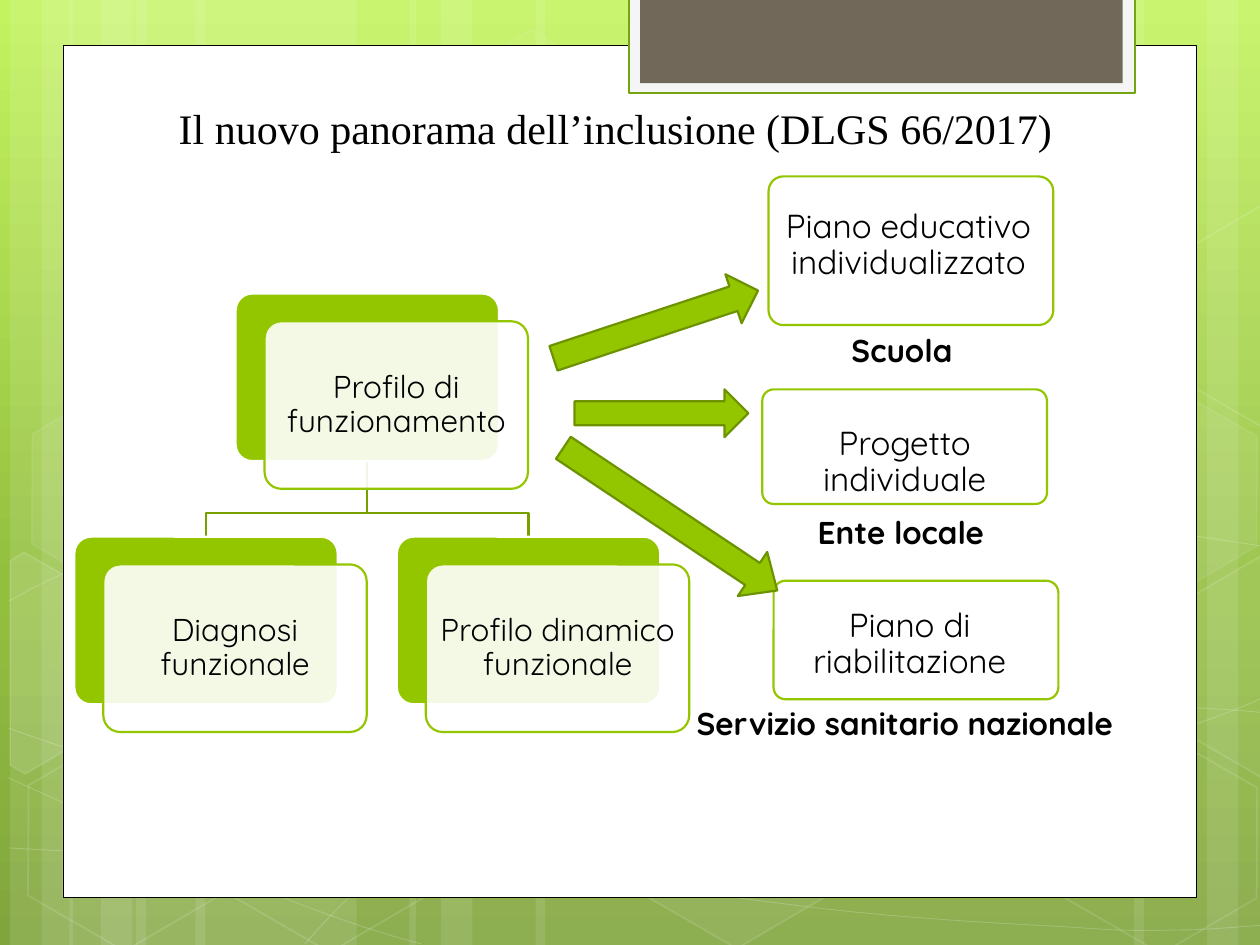
from copy import deepcopy
from math import cos, radians, sin

from lxml import etree
from pptx import Presentation
from pptx.dml.color import RGBColor
from pptx.enum.shapes import MSO_SHAPE
from pptx.enum.text import MSO_ANCHOR, PP_ALIGN
from pptx.oxml.ns import qn
from pptx.util import Inches, Pt

RECT = MSO_SHAPE.RECTANGLE
ROUNDED = MSO_SHAPE.ROUNDED_RECTANGLE
HEXAGON = MSO_SHAPE.HEXAGON
ARROW = MSO_SHAPE.RIGHT_ARROW
CENTER, LEFT = PP_ALIGN.CENTER, PP_ALIGN.LEFT
MIDDLE, TOP = MSO_ANCHOR.MIDDLE, MSO_ANCHOR.TOP

SLIDE_W, SLIDE_H = Inches(10), Inches(7.5)
COLS, ROWS = 10, 7.5
COL, ROW = SLIDE_W / COLS, SLIDE_H / ROWS
BODY_FONT, TITLE_FONT = "Quicksand", "Times New Roman"
GREEN, DARK_GREEN, WHITE, BLACK = "94C600", "6D9200", "FFFFFF", "000000"
TILT = 30

BANDS = [(1.08, 1.75), (0.08, 0.5), (0.33, 0.83), (1.55, 1.75), (0.55, 0.5),
         (0.8, 0.83), (7.33, 1.75), (9.58, 0.5), (9, 0.83), (4.25, 3.08),
         (3.25, 0.5), (3.5, 0.83)]
WAVES = [
    [(0.07, 6.73), (0.61, 6.76), (1.15, 6.79), (1.9, 6.78), (2.65, 6.77),
     (3.58, 6.75), (4.58, 6.65), (5.58, 6.55), (7, 6.36), (7.92, 6.17),
     (8.83, 5.98), (9.77, 5.68), (10.07, 5.51)],
    [(0.07, 4.77), (0.36, 4.61), (0.65, 4.46), (1.21, 4.31), (1.78, 4.16),
     (2.59, 3.94), (3.47, 3.87), (4.36, 3.8), (5.44, 3.79), (6.54, 3.87),
     (7.64, 3.95), (9.47, 4.26), (10.07, 4.34)],
    [(0.06, 6.17), (1.27, 6.72), (2.47, 7.27), (3.34, 7.49)],
    [(0.07, 5.78), (0.38, 5.89), (0.7, 6), (1.28, 6.16), (1.86, 6.31),
     (2.73, 6.56), (3.57, 6.73), (4.4, 6.9), (5.45, 7.08), (6.28, 7.18),
     (7.11, 7.29), (8, 7.33), (8.53, 7.36), (9.05, 7.4), (9.19, 7.38),
     (9.45, 7.38), (9.71, 7.37), (9.89, 7.35), (10.07, 7.34)],
    [(2.42, 7.49), (2.6, 7.29), (2.78, 7.09), (3.02, 6.91), (3.26, 6.73),
     (3.6, 6.53), (3.88, 6.39), (4.16, 6.25), (4.33, 6.19), (4.7, 6.09),
     (5.06, 5.99), (5.73, 5.85), (6.08, 5.78), (6.44, 5.71), (6.49, 5.71),
     (6.8, 5.69), (7.11, 5.66), (7.6, 5.63), (7.94, 5.62), (8.29, 5.61),
     (8.86, 5.62), (8.86, 5.62), (9.08, 5.62), (9.31, 5.62), (9.53, 5.62),
     (9.71, 5.63), (9.88, 5.64), (10.06, 5.66)],
]
HEXAGONS = [(3.34, 0.36, 4, 8), (4.97, 5.89, 6, 12), (0.11, 5.91, 0, 12),
            (0.14, 3.12, 7, 8), (1.74, 5.92, 0, 12), (7.53, 4.53, 10, 12),
            (8.34, 5.93, 0, 12), (8.34, 3.14, 7, 8)]
CUT_HEXAGONS = [
    ((0.36, 5.35), [(0.08, 4.45), (0.19, 4.38), (0.96, 4.82), (0.95, 5.7),
                    (0.2, 6.14), (0.08, 6.07)], 10),
    ((9.85, 5.2), [(9.26, 4.85), (10.01, 4.41), (10.09, 4.46), (10.09, 6.13),
                   (10.02, 6.17), (9.26, 5.73)], 4),
    ((9.85, 2.41), [(9.26, 2.07), (10.01, 1.63), (10.1, 1.68), (10.09, 3.35),
                    (10.02, 3.39), (9.26, 2.95)], 0),
]
CARD_W, CARD_H = 2.09, 1.33
PROFILE = (1.87, 2.33, "Profilo di funzionamento")
SOURCES = [(0.59, 4.26, "Diagnosi funzionale"),
           (3.15, 4.26, "Profilo dinamico funzionale")]
PLANS = [
    ((6.1, 1.4, 2.26, 1.18), (6.1, 1.58, 2.22, 0.74), "Piano educativo individualizzato"),
    ((6.05, 3.09, 2.26, 0.91), (6.09, 3.13, 2.18, 1.09), "Progetto individuale"),
    ((6.14, 4.61, 2.26, 0.94), (6.13, 4.68, 2.18, 0.88), "Piano di riabilitazione"),
]
OWNERS = [((6.66, 2.58, 1.1, 0.4), "Scuola"),
          ((6.39, 4.02, 1.69, 0.4), "Ente locale"),
          ((5.43, 5.54, 3.69, 0.4), "Servizio sanitario nazionale")]
ARROWS = [((4.35, 2.37, 1.71, 0.41), 341.7, 0.5),
          ((4.56, 3.09, 1.38, 0.38), 0, 0.5),
          ((4.3, 3.91, 2.04, 0.42), 33.7, 0.56)]


def place(box):
    left, top, width, height = box
    return round(left * COL), round(top * ROW), round(width * COL), round(height * ROW)


def color(target, value, opacity=100):
    target.solid()
    target.fore_color.rgb = RGBColor.from_string(value)
    if opacity < 100:
        tint = target._xPr.find(qn("a:solidFill"))[0]
        etree.SubElement(tint, qn("a:alpha")).set("val", str(opacity * 1000))


def paint(shape, fill=None, line=None, weight=1.25, opacity=100, line_opacity=100):
    shape.shadow.inherit = False
    if fill and opacity:
        color(shape.fill, fill, opacity)
    else:
        shape.fill.background()
    if line:
        color(shape.line.fill, line, line_opacity)
        shape.line.width = Pt(weight)
    else:
        shape.line.fill.background()
    return shape


def add_block(slide, preset, box, **look):
    return paint(slide.shapes.add_shape(preset, *place(box)), **look)


def add_rounded(slide, box, **look):
    add_block(slide, ROUNDED, box, **look).adjustments[0] = 0.1


def add_outline(slide, points, closed=False, **look):
    (start_x, start_y), *rest = [(x * COL, y * ROW) for x, y in points]
    builder = slide.shapes.build_freeform(start_x, start_y, scale=1.0)
    builder.add_line_segments(rest, close=closed)
    return paint(builder.convert_to_shape(), **look)


def add_wave(slide, controls, **look):
    wave = add_outline(slide, controls, **look)
    segments = list(wave.element.iter(qn("a:lnTo")))
    for start in range(0, len(segments), 3):
        trio = segments[start:start + 3]
        curve = etree.SubElement(trio[0].getparent(), qn("a:cubicBezTo"))
        for segment in trio:
            curve.append(segment[0])
            segment.getparent().remove(segment)


def write(frame, text, size, font=BODY_FONT, bold=False, align=CENTER,
          anchor=MIDDLE, spacing=1.0):
    frame.text = text
    frame.word_wrap = True
    frame.vertical_anchor = anchor
    paragraph = frame.paragraphs[0]
    paragraph.alignment = align
    paragraph.line_spacing = spacing
    run_font = paragraph.runs[0].font
    run_font.name, run_font.size, run_font.bold = font, Pt(size), bold
    color(run_font.fill, BLACK)


def add_caption(slide, box, text, size, margin):
    frame = slide.shapes.add_textbox(*place(box)).text_frame
    write(frame, text, size, spacing=0.9)
    frame.margin_left = frame.margin_right = Inches(margin)
    frame.margin_top = frame.margin_bottom = Inches(margin)


def level(point, center):
    across, down = point[0] - center[0], point[1] - center[1]
    turn = radians(TILT)
    return (center[0] + across * cos(turn) + down * sin(turn),
            center[1] - across * sin(turn) + down * cos(turn))


def draw_backdrop(slide):
    backdrop = slide.background.fill
    backdrop.gradient()
    backdrop.gradient_angle = 270
    stop_list = next(slide.element.iter(qn("a:gsLst")))
    stop_list.insert(1, deepcopy(stop_list[0]))
    shades = [(0, "C3F35F"), (0.62, "93BF3F"), (1, "81A53E")]
    for stop, (position, shade) in zip(backdrop.gradient_stops, shades):
        stop.position = position
        stop.color.rgb = RGBColor.from_string(shade)
    for left, width in BANDS:
        add_block(slide, RECT, (left, 0, width, ROWS), fill=WHITE, opacity=10)
    for controls in WAVES:
        add_wave(slide, controls, line=WHITE, weight=0.5, line_opacity=20)
    for left, top, opacity, edge in HEXAGONS:
        cell = add_block(slide, HEXAGON, (left, top, 1.75, 1.52), fill=WHITE,
                         line=WHITE, weight=1, opacity=opacity, line_opacity=edge)
        cell.adjustments[0] = 0.285
        cell.rotation = TILT
    for center, corners, opacity in CUT_HEXAGONS:
        cell = add_outline(slide, [level(corner, center) for corner in corners],
                           closed=True, fill=WHITE, line=WHITE, weight=1,
                           opacity=opacity, line_opacity=12)
        cell.rotation = TILT


def draw_panel(slide, box):
    left, top, width, _ = box
    add_block(slide, RECT, box, fill=WHITE, line=BLACK, weight=0.5)
    tab_left = left + width / 2 - 0.01
    add_block(slide, RECT, (tab_left, -0.02, 4.02, 0.76), fill="F5F5F5", line="74A510")
    add_block(slide, RECT, (tab_left + 0.09, -0.02, 3.83, 0.68), fill="71685A")


def draw_title(slide, box):
    title = slide.shapes.title
    title.left, title.top, title.width, title.height = place(box)
    write(title.text_frame, "Il nuovo panorama dell’inclusione (DLGS 66/2017)", 24,
          font=TITLE_FONT, anchor=TOP)
    title.element.getparent().append(title.element)


def draw_card(slide, left, top, text):
    add_rounded(slide, (left, top, CARD_W, CARD_H), fill=GREEN, line=WHITE)
    left, top = left + 0.23, top + 0.22
    add_rounded(slide, (left, top, CARD_W, CARD_H), fill=WHITE, line=GREEN, opacity=90)
    add_caption(slide, (left + 0.04, top + 0.04, CARD_W - 0.08, CARD_H - 0.08), text, 18, 0.07)


def draw_profile_tree(slide):
    trunk = PROFILE[0] + CARD_W / 2
    base = PROFILE[1] + CARD_H
    for left, top, _ in reversed(SOURCES):
        branch, bend = left + CARD_W / 2, top - 0.19
        add_outline(slide, [(trunk, base), (trunk, bend), (branch, bend), (branch, top)],
                    line="779F00")
    for card in [PROFILE, *SOURCES]:
        draw_card(slide, *card)


def draw_plan(slide, box, caption_box, text):
    add_rounded(slide, box, fill=WHITE, line=GREEN, opacity=90)
    add_caption(slide, caption_box, text, 19, 0.08)


def draw_arrow(slide, box, angle, head):
    arrow = add_block(slide, ARROW, box, fill=GREEN, line=DARK_GREEN)
    arrow.rotation = angle
    arrow.adjustments[1] = head


def draw_owner(slide, box, owner):
    label = slide.shapes.add_textbox(*place(box))
    write(label.text_frame, owner, 18, bold=True, align=LEFT, anchor=TOP)


def main():
    deck = Presentation()
    deck.slide_width, deck.slide_height = SLIDE_W, SLIDE_H
    slide = deck.slides.add_slide(deck.slide_layouts[5])
    draw_backdrop(slide)
    draw_panel(slide, (0.5, 0.36, 9, 6.76))
    draw_profile_tree(slide)
    draw_title(slide, (0.75, 0.76, 8.27, 0.5))
    for draw, parts in ((draw_plan, PLANS), (draw_arrow, ARROWS), (draw_owner, OWNERS)):
        for part in parts:
            draw(slide, *part)
    deck.save("out.pptx")


if __name__ == "__main__":
    main()
